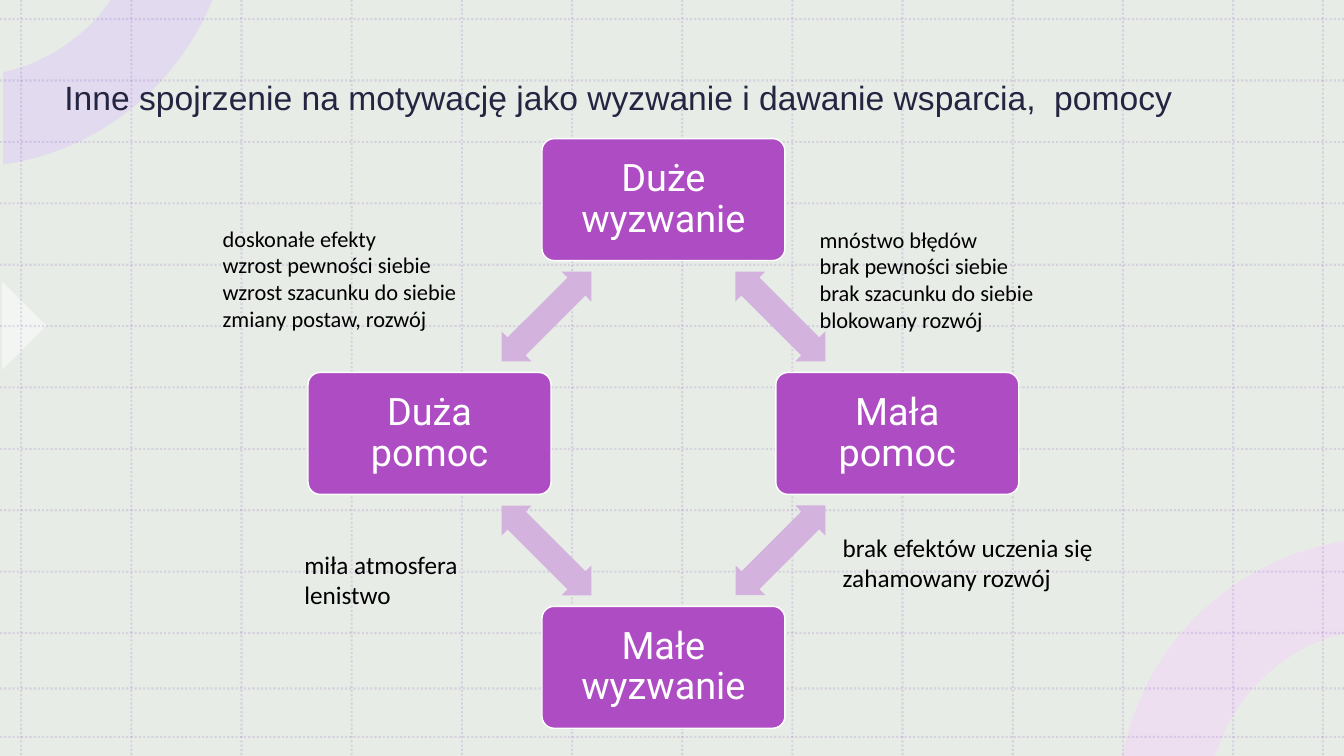
from lxml.etree import SubElement
from pptx import Presentation
from pptx.dml.color import RGBColor
from pptx.enum.dml import MSO_LINE as Dash
from pptx.enum.shapes import MSO_CONNECTOR as Link, MSO_SHAPE as Kind
from pptx.enum.text import MSO_ANCHOR as Anchor, MSO_AUTO_SIZE as Fit, PP_ALIGN as Align
from pptx.oxml.ns import qn
from pptx.util import Inches, Pt

WIDE, HIGH = 13.33, 7.5


def color(code):
    return RGBColor.from_string(code)


def apply(item, values):
    for name, value in values.items():
        setattr(item, name, value)


def fade(shape, alpha):
    for node in shape._element.spPr.iter(qn("a:srgbClr")):
        SubElement(node, qn("a:alpha"), val=str(alpha * 1000))


def curve(start, *ends, steps=24):
    points = (start, *ends)
    for step in range(1, steps + 1):
        t = step / steps
        parts = ((1 - t) ** 3, 3 * t * (1 - t) ** 2, 3 * t * t * (1 - t), t ** 3)
        yield tuple(sum(k * p[axis] for k, p in zip(parts, points)) for axis in (0, 1))


class Board:
    ink = "242541"
    node = "AE4DC3"
    arrow = "D3B2DE"
    grid = "6A3BB1"

    def __init__(self, slide):
        self.shapes = slide.shapes

    def paint(self, shape, fill, alpha=100, edge=None):
        shape.shadow.inherit = False
        shape.fill.solid()
        shape.fill.fore_color.rgb = color(fill)
        if edge:
            shape.line.color.rgb = color(edge)
            shape.line.width = Pt(1)
        else:
            shape.line.fill.background()
        if alpha < 100:
            fade(shape, alpha)
        return shape

    def block(self, kind, box, fill, alpha=100, edge=None, turn=0, adjust=()):
        shape = self.shapes.add_shape(kind, *map(Inches, box))
        shape.rotation = turn
        for index, value in enumerate(adjust):
            shape.adjustments[index] = value
        return self.paint(shape, fill, alpha, edge)

    def band(self, points, fill, alpha):
        spots = [(Inches(x), Inches(y)) for x, y in points]
        form = self.shapes.build_freeform(*spots[0])
        form.add_line_segments(spots[1:], close=True)
        self.paint(form.convert_to_shape(), fill, alpha)

    def rule(self, *ends):
        line = self.shapes.add_connector(Link.STRAIGHT, *map(Inches, ends))
        line.line.color.rgb = color(self.grid)
        apply(line.line, {"width": Pt(1.5), "dash_style": Dash.ROUND_DOT})
        fade(line, 15)
        SubElement(line._element.spPr, qn("a:effectLst"))

    def words(self, shape, lines, font, size, ink, frame, para):
        apply(shape.text_frame, {"word_wrap": True, **frame})
        shape.text_frame.text = "\n".join(lines)
        for part in shape.text_frame.paragraphs:
            apply(part, para)
            for run in part.runs:
                apply(run.font, {"name": font, "size": Pt(size)})
                run.font.color.rgb = color(ink)

    def label(self, box, lines, font="Calibri", size=16, ink="000000",
              frame={"auto_size": Fit.SHAPE_TO_FIT_TEXT}, para={}):
        shape = self.shapes.add_textbox(*map(Inches, box))
        self.words(shape, lines, font, size, ink, frame, para)

    def card(self, x, y, text):
        wide, high = 2.41, 1.21
        box = (x - wide / 2, y - high / 2, wide, high)
        shape = self.block(Kind.ROUNDED_RECTANGLE, box, self.node, edge="FFFFFF", adjust=(0.1,))
        sides = ("left", "right", "top", "bottom")
        frame = {f"margin_{side}": Inches(0.14) for side in sides}
        frame["vertical_anchor"] = Anchor.MIDDLE
        para = {"alignment": Align.CENTER, "line_spacing": 0.9}
        self.words(shape, [text], "Roboto", 27, "FFFFFF", frame, para)

    def double(self, x, y, turn):
        wide, high = 1.26, 0.42
        box = (x - wide / 2, y - high / 2, wide, high)
        self.block(Kind.LEFT_RIGHT_ARROW, box, self.arrow, turn=turn, adjust=(0.6, 0.5))


def backdrop(board):
    board.block(Kind.RECTANGLE, (0, 0, WIDE, HIGH), "E3E8E2", 80)
    board.band([(1.1, 0), (2.11, 0), (2.1, 0.02),
                *curve((2.1, 0.02), (1.76, 0.83), (1.05, 1.43), (0.17, 1.61)),
                (0.03, 1.63), (0.03, 0.72), (0.17, 0.68),
                *curve((0.17, 0.68), (0.5, 0.58), (0.79, 0.38), (1.01, 0.12))], "E1D6F1", 80)
    board.block(Kind.RIGHT_TRIANGLE, (-0.29, 2.92, 0.62, 0.62), "FFFFFF", 50, turn=225)
    board.band([(13.33, 5.37), (13.33, 6.29), (13.23, 6.31),
                *curve((13.23, 6.31), (12.67, 6.48), (12.23, 6.93), (12.06, 7.48)),
                (12.05, 7.5), (11.13, 7.5), (11.14, 7.47),
                *curve((11.14, 7.47), (11.35, 6.43), (12.17, 5.6), (13.22, 5.39))], "EFDBF3", 80)
    for x in [0.21 + 12.02 * i / 11 for i in range(12)] + [13.12]:
        board.rule(x, 0, x, HIGH)
    for y in [0.19 + 6.09 * i / 10 for i in range(11)] + [6.83, 7.31]:
        board.rule(0, y, WIDE, y)


def cycle(board):
    names = ("Duże wyzwanie", "Mała pomoc", "Małe wyzwanie", "Duża pomoc")
    sides = ((0, -1), (1, 0), (0, 1), (-1, 0))
    spots = [(6.58 + 2.32 * dx, 4.3 + 2.32 * dy) for dx, dy in sides]
    for i, (name, (x, y)) in enumerate(zip(names, spots)):
        board.card(x, y, name)
        right, low = spots[(i + 1) % len(spots)]
        board.double((x + right) / 2, (y + low) / 2, 45 + 90 * i)


def main():
    deck = Presentation()
    apply(deck, {"slide_width": Inches(WIDE), "slide_height": Inches(HIGH)})
    board = Board(deck.slides.add_slide(deck.slide_layouts[6]))
    backdrop(board)
    title = "Inne spojrzenie na motywację jako wyzwanie i dawanie wsparcia,  pomocy"
    board.label((0.54, -0.17, 11.69, 1.38), [title], "Arial", 24, board.ink,
                {"vertical_anchor": Anchor.BOTTOM},
                {"line_spacing": 1.1, "space_before": Pt(10)})
    cycle(board)
    board.label((8.03, 2.19, 3.25, 1.18), [
        "mnóstwo błędów", "brak pewności siebie",
        "brak szacunku do siebie", "blokowany rozwój"])
    board.label((8.26, 5.23, 3, 0.71), ["brak efektów uczenia się", "zahamowany rozwój"], size=18)
    board.label((2.92, 5.4, 3, 0.71), ["miła atmosfera", "lenistwo"], size=18)
    board.label((2.11, 2.18, 3, 1.18), [
        "doskonałe efekty", "wzrost pewności siebie",
        "wzrost szacunku do siebie", "zmiany postaw, rozwój"])
    deck.save("out.pptx")


if __name__ == "__main__":
    main()
